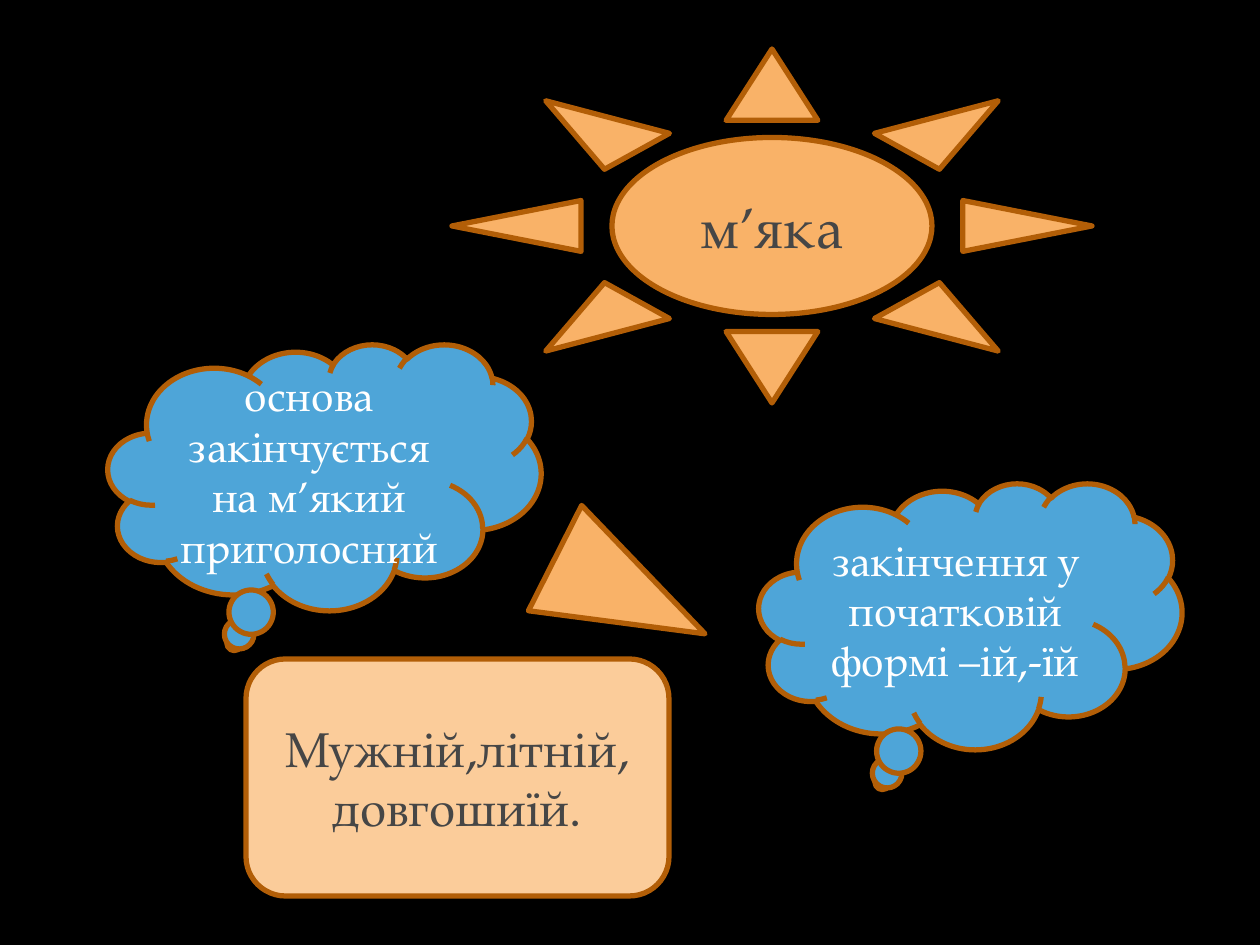
"""Build a slide on the soft group of Ukrainian adjectives."""
from dataclasses import dataclass

from pptx import Presentation
from pptx.dml.color import RGBColor
from pptx.enum.shapes import MSO_SHAPE
from pptx.enum.text import MSO_ANCHOR, PP_ALIGN
from pptx.util import Emu, Pt


@dataclass(frozen=True)
class Theme:
    background: str = "000000"
    outline: str = "B25E07"
    orange: str = "F9B268"
    peach: str = "FBCC9A"
    blue: str = "4EA5D8"
    dark: str = "464646"
    white: str = "FFFFFF"
    font: str = "TeX Gyre Pagella"
    title: int = 32
    example: int = 28
    rule: int = 24
    line: int = 3


THEME = Theme()
PAGE_SIZE = (1260, 945)
EMU_PER_PX = 914400 / 126

STYLES = {
    "title": (MSO_SHAPE.SUN, THEME.orange, THEME.dark, THEME.title),
    "rule": (MSO_SHAPE.CLOUD_CALLOUT, THEME.blue, THEME.white, THEME.rule),
    "pointer": (MSO_SHAPE.FLOWCHART_EXTRACT, THEME.orange, THEME.dark, THEME.rule),
    "example": (MSO_SHAPE.ROUNDED_RECTANGLE, THEME.peach, THEME.dark, THEME.example),
}

ITEMS = [
    ("title", (452, 49, 640, 354), 0, ["м’яка"]),
    ("rule", (108, 344, 433, 266), 0, ["основа закінчується на м’який приголосний"]),
    ("rule", (759, 483, 423, 266), 0, ["закінчення у початковій формі –ій,-їй"]),
    ("pointer", (571, 512, 118, 168), 116.8, []),
    ("example", (246, 659, 423, 237), 0, ["Мужній,літній,", "довгошиїй."]),
]


def px(value):
    return Emu(round(value * EMU_PER_PX))


def color(value):
    return RGBColor.from_string(value)


def apply(target, formats):
    for name, value in formats.items():
        setattr(target, name, value)


def paint(fill, value):
    fill.solid()
    fill.fore_color.rgb = color(value)


def write(frame, lines, text_color, size):
    apply(frame, {"word_wrap": True, "vertical_anchor": MSO_ANCHOR.MIDDLE})
    for index, line in enumerate(lines):
        para = frame.add_paragraph() if index else frame.paragraphs[0]
        para.alignment = PP_ALIGN.CENTER
        span = para.add_run()
        span.text = line
        apply(span.font, {"name": THEME.font, "size": Pt(size)})
        span.font.color.rgb = color(text_color)


def add_item(page, style, bounds, rotation, lines):
    preset, fill, text_color, size = STYLES[style]
    box = page.shapes.add_shape(preset, *map(px, bounds))
    box.rotation = rotation
    box.shadow.inherit = False
    paint(box.fill, fill)
    paint(box.line.fill, THEME.outline)
    box.line.width = Pt(THEME.line)
    write(box.text_frame, lines, text_color, size)


def main():
    deck = Presentation()
    deck.slide_width, deck.slide_height = map(px, PAGE_SIZE)
    page = deck.slides.add_slide(deck.slide_layouts[6])
    paint(page.background.fill, THEME.background)
    for item in ITEMS:
        add_item(page, *item)
    deck.save("out.pptx")


if __name__ == "__main__":
    main()
